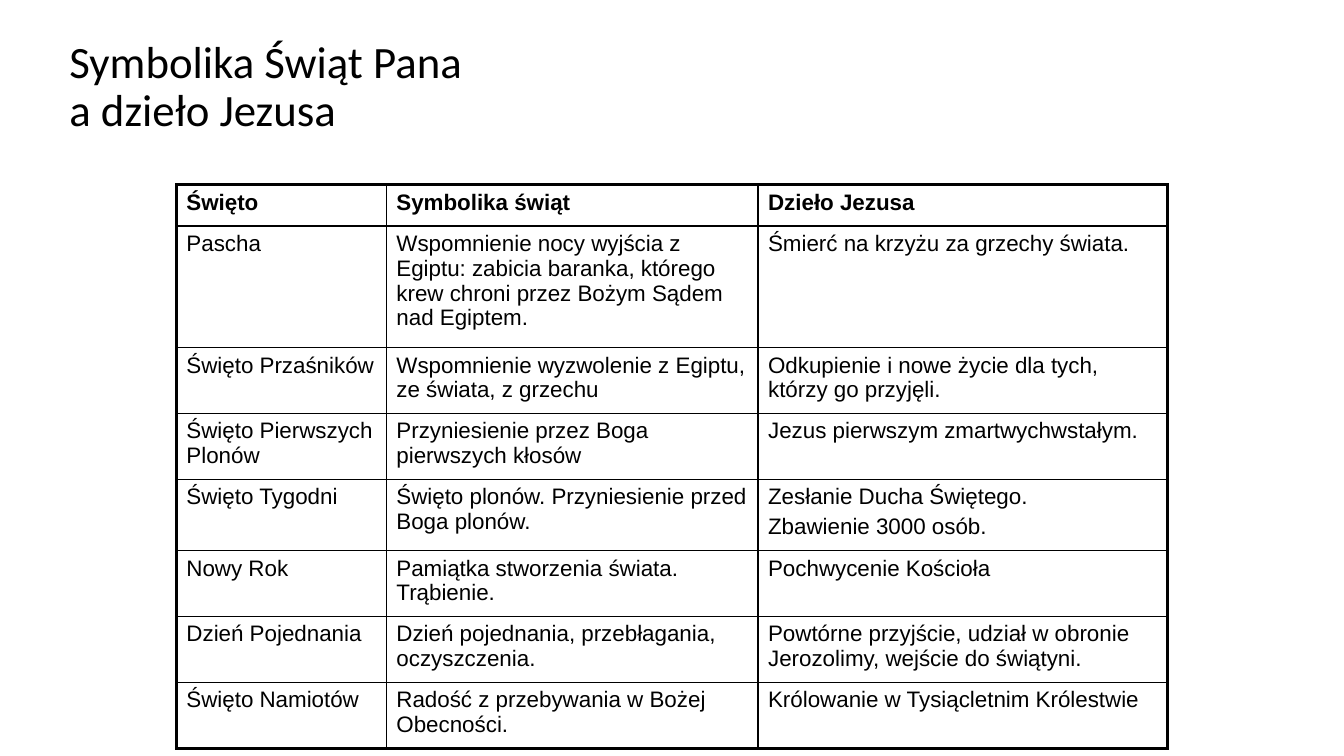
import pptx
import pptx.dml.color
import pptx.enum.text
import pptx.oxml
import pptx.oxml.ns
import pptx.util

Pt = pptx.util.Pt
BLACK = pptx.dml.color.RGBColor(0, 0, 0)
OUTER, INNER = 2.25, 1

TITLE = ["Symbolika Świąt Pana", "a dzieło Jezusa"]
COL_WIDTHS = [150, 265.5, 292.5]
ROW_HEIGHTS = [29.5, 87, 47, 47, 51, 47, 47, 47]
FEASTS = [
    ["Święto", "Symbolika świąt", "Dzieło Jezusa"],
    ["Pascha",
     "Wspomnienie nocy wyjścia z Egiptu: zabicia baranka, którego krew chroni "
     "przez Bożym Sądem nad Egiptem.",
     "Śmierć na krzyżu za grzechy świata."],
    ["Święto Przaśników",
     "Wspomnienie wyzwolenie z Egiptu, ze świata, z grzechu",
     "Odkupienie i nowe życie dla tych, którzy go przyjęli."],
    ["Święto Pierwszych Plonów",
     "Przyniesienie przez Boga pierwszych kłosów",
     "Jezus pierwszym zmartwychwstałym."],
    ["Święto Tygodni",
     "Święto plonów. Przyniesienie przed Boga plonów.",
     "Zesłanie Ducha Świętego.\nZbawienie 3000 osób."],
    ["Nowy Rok",
     "Pamiątka stworzenia świata. Trąbienie.",
     "Pochwycenie Kościoła"],
    ["Dzień Pojednania",
     "Dzień pojednania, przebłagania, oczyszczenia.",
     "Powtórne przyjście, udział w obronie Jerozolimy, wejście do świątyni."],
    ["Święto Namiotów",
     "Radość z przebywania w Bożej Obecności.",
     "Królowanie w Tysiącletnim Królestwie"],
]


def add_run(p, text, font, size, bold=False):
    r = p.add_run()
    r.text = text
    r.font.name = font
    r.font.size = Pt(size)
    r.font.bold = bold
    r.font.color.rgb = BLACK


def set_borders(cell, widths):
    """Draw the cell's left, right, top and bottom lines, in that order."""
    tcPr = cell._tc.get_or_add_tcPr()
    for i, (side, width) in enumerate(zip("LRTB", widths)):
        tcPr.insert(i, pptx.oxml.parse_xml(
            f'<a:ln{side} {pptx.oxml.ns.nsdecls("a")} w="{Pt(width)}">'
            f'<a:solidFill><a:srgbClr val="{BLACK}"/></a:solidFill></a:ln{side}>'))


def add_title(s, x, y, w, h):
    tf = s.shapes.add_textbox(Pt(x), Pt(y), Pt(w), Pt(h)).text_frame
    tf.word_wrap = True
    tf.vertical_anchor = pptx.enum.text.MSO_ANCHOR.MIDDLE
    p = tf.paragraphs[0]
    p.line_spacing = 0.9
    for i, line in enumerate(TITLE):
        if i:
            p.add_line_break()
        add_run(p, line, "Calibri", 32)


def add_feast_table(s, x, y):
    rows, cols = len(ROW_HEIGHTS), len(COL_WIDTHS)
    table = s.shapes.add_table(rows, cols, Pt(x), Pt(y), Pt(sum(COL_WIDTHS)),
                               Pt(sum(ROW_HEIGHTS))).table
    table.first_row = table.horz_banding = False
    for column, width in zip(table.columns, COL_WIDTHS):
        column.width = Pt(width)
    for row, height in zip(table.rows, ROW_HEIGHTS):
        row.height = Pt(height)

    for i, feast in enumerate(FEASTS):
        for j, text in enumerate(feast):
            cell = table.cell(i, j)
            cell.fill.background()
            # Heavy frame around the table, thin lines inside
            edges = [j == 0, j == cols - 1, i == 0, i == rows - 1]
            set_borders(cell, [OUTER if edge else INNER for edge in edges])
            tf = cell.text_frame
            for k, line in enumerate(text.split("\n")):
                p = tf.add_paragraph() if k else tf.paragraphs[0]
                p.space_before = Pt(3.2)
                add_run(p, line, "Arial", 16, bold=i == 0)


def main():
    prs = pptx.Presentation()
    prs.slide_width, prs.slide_height = Pt(960), Pt(540)
    s = prs.slides.add_slide(prs.slide_layouts[6])
    add_title(s, 42.5, 18, 816, 90)
    add_feast_table(s, 126, 132)
    prs.save("out.pptx")


if __name__ == "__main__":
    main()
